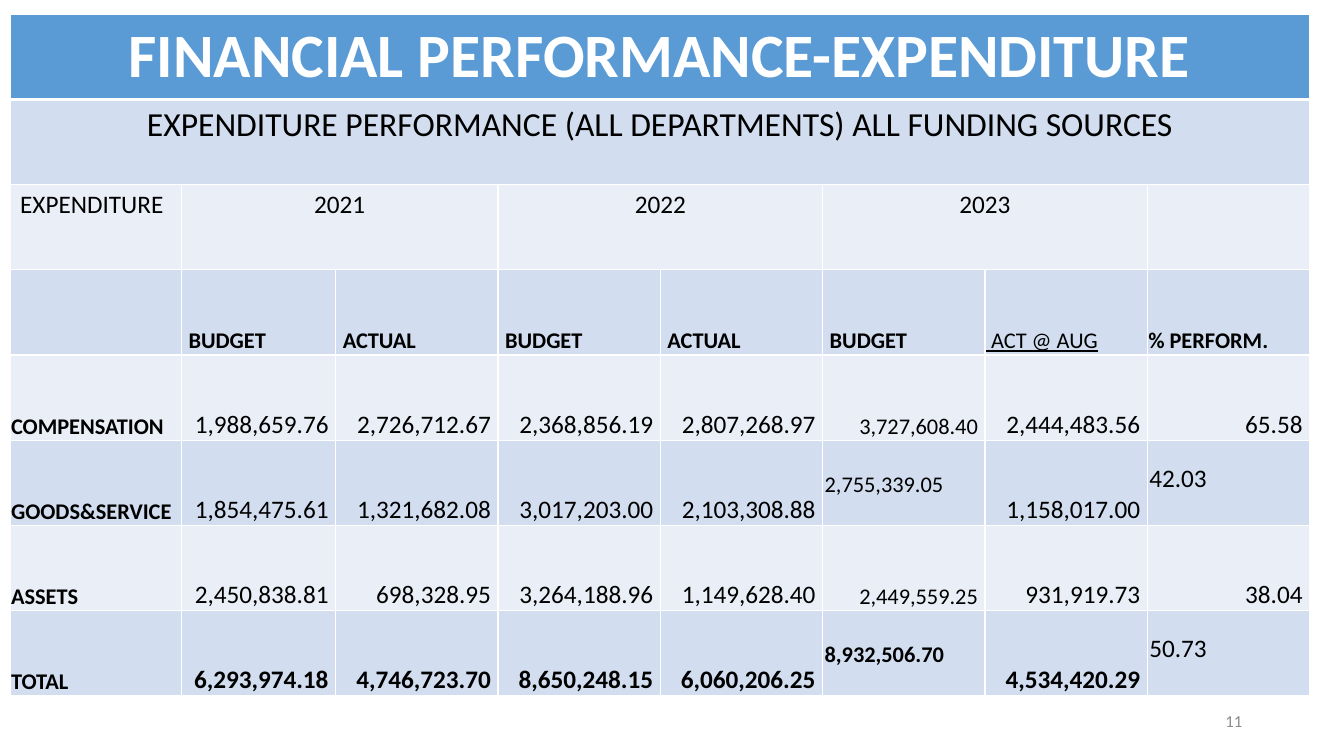
from dataclasses import dataclass
from lxml.etree import SubElement
from pptx import Presentation
from pptx.dml.color import RGBColor
from pptx.enum.text import MSO_ANCHOR, PP_ALIGN
from pptx.oxml.ns import qn
from pptx.util import Pt

PX = 9144  # one hundredth of an inch


@dataclass(frozen=True)
class Theme:
    font: str = "Calibri"
    head: str = "5B9BD5"
    dark: str = "D2DEEF"
    light: str = "EAEFF7"
    ink: str = "000000"
    white: str = "FFFFFF"
    gray: str = "8C8C8C"
    title: int = 44
    sub: int = 24
    body: int = 18
    label: int = 16
    note: int = 12


T = Theme()
LEFT, MID, RIGHT = PP_ALIGN.LEFT, PP_ALIGN.CENTER, PP_ALIGN.RIGHT
WIDE = (10, 5, 10, 5)  # cell margins: left, top, right, bottom
TIGHT = (1, 1, 1, 0)
INDENT = (7, 1, 1, 0)
NUMBER = (1, 1, 7, 0)

YEARS = ["2021", "2022", "2023"]
HEADS = ["BUDGET", "ACTUAL"] * 2 + ["BUDGET", " ACT @ AUG", "% PERFORM."]
ROWS = [
    ["COMPENSATION", "1,988,659.76", "2,726,712.67", "2,368,856.19",
     "2,807,268.97", "3,727,608.40", "2,444,483.56", "65.58"],
    ["GOODS&SERVICE", "1,854,475.61", "1,321,682.08", "3,017,203.00",
     "2,103,308.88", "2,755,339.05", "1,158,017.00", "42.03"],
    ["ASSETS", "2,450,838.81", "698,328.95", "3,264,188.96",
     "1,149,628.40", "2,449,559.25", "931,919.73", "38.04"],
    ["TOTAL", "6,293,974.18", "4,746,723.70", "8,650,248.15",
     "6,060,206.25", "8,932,506.70", "4,534,420.29", "50.73"],
]
COLS = [170, 153] + [161] * 6
BUDGET, RATE = 5, 7  # columns with their own format


def style(para, size, color=T.ink, bold=False, align=LEFT):
    para.alignment = align
    for run in para.runs:
        font = run.font
        font.name, font.size, font.bold = T.font, Pt(size), bold
        font.color.rgb = RGBColor.from_string(color)


def edge(cell, low):
    """Draw white borders; the lower one is low points wide."""
    props = cell._tc.get_or_add_tcPr()
    for side in "LRTB":
        width = low if side == "B" else 1
        line = SubElement(props, qn("a:ln" + side), w=str(Pt(width)))
        fill = SubElement(line, qn("a:solidFill"))
        SubElement(fill, qn("a:srgbClr"), val=T.white)


def put(cell, text, size, bold=False, align=LEFT, pad=TIGHT,
        anchor=MSO_ANCHOR.BOTTOM, color=T.ink):
    cell.text_frame.text = text
    style(cell.text_frame.paragraphs[0], size, color, bold, align)
    cell.vertical_anchor = anchor
    (cell.margin_left, cell.margin_top,
     cell.margin_right, cell.margin_bottom) = [n * PX for n in pad]


def band(grid, row, col, span, text, size, **kw):
    """Merge cells of one row and set a heading at their top."""
    cell = grid.cell(row, col)
    if span > 1:
        cell.merge(grid.cell(row, col + span - 1))
    put(cell, text, size, pad=WIDE, anchor=MSO_ANCHOR.TOP, **kw)


def add_grid(slide, x, y, w, h):
    count = len(ROWS) + 4
    grid = slide.shapes.add_table(
        count, len(COLS), x * PX, y * PX, w * PX, h * PX).table
    for col, width in zip(grid.columns, COLS):
        col.width = width * PX

    # Borders and banded fills
    for r, row in enumerate(grid.rows):
        row.height = h * PX // count
        tint = T.head if r == 0 else T.dark if r % 2 else T.light
        for cell in row.cells:
            edge(cell, 3 if r == 0 else 1)
            cell.fill.solid()
            cell.fill.fore_color.rgb = RGBColor.from_string(tint)

    # Headings
    band(grid, 0, 0, len(COLS), "FINANCIAL PERFORMANCE-EXPENDITURE",
         T.title, bold=True, align=MID, color=T.white)
    band(grid, 1, 0, len(COLS),
         "EXPENDITURE PERFORMANCE (ALL DEPARTMENTS) ALL FUNDING SOURCES",
         T.sub, align=MID)
    band(grid, 2, 0, 1, "EXPENDITURE", T.body)
    for i, year in enumerate(YEARS):
        band(grid, 2, 1 + 2 * i, 2, year, T.body, align=MID)
    for c, head in enumerate(HEADS, 1):
        aug = "AUG" in head
        put(grid.cell(3, c), head, T.label, bold=not aug,
            pad=INDENT if c < 6 else TIGHT)
        if aug:
            run = grid.cell(3, c).text_frame.paragraphs[0].runs[0]
            run.font.underline = True

    # Figures
    for r, (name, *values) in enumerate(ROWS, 4):
        put(grid.cell(r, 0), name, T.label, bold=True)
        for c, value in enumerate(values, 1):
            size = T.label if c == BUDGET else T.body
            bold = name == "TOTAL" and c != RATE
            align, pad = RIGHT, NUMBER
            if r % 2 and c in (BUDGET, RATE):  # raised by one line
                align, pad = LEFT, (2, 1, 1, 27 if c == BUDGET else 31)
            put(grid.cell(r, c), value, size, bold, align, pad)


def add_page(slide, x, y, w, h):
    frame = slide.shapes.add_textbox(x * PX, y * PX, w * PX, h * PX).text_frame
    frame.word_wrap = True
    frame.vertical_anchor = MSO_ANCHOR.MIDDLE
    frame.text = "11"
    style(frame.paragraphs[0], T.note, T.gray, align=RIGHT)


def main():
    deck = Presentation()
    deck.slide_width, deck.slide_height = 1333 * PX, 750 * PX
    slide = deck.slides.add_slide(deck.slide_layouts[6])
    add_grid(slide, 10, 14, sum(COLS), 676)
    add_page(slide, 942, 695, 300, 40)
    deck.save("out.pptx")


if __name__ == "__main__":
    main()
